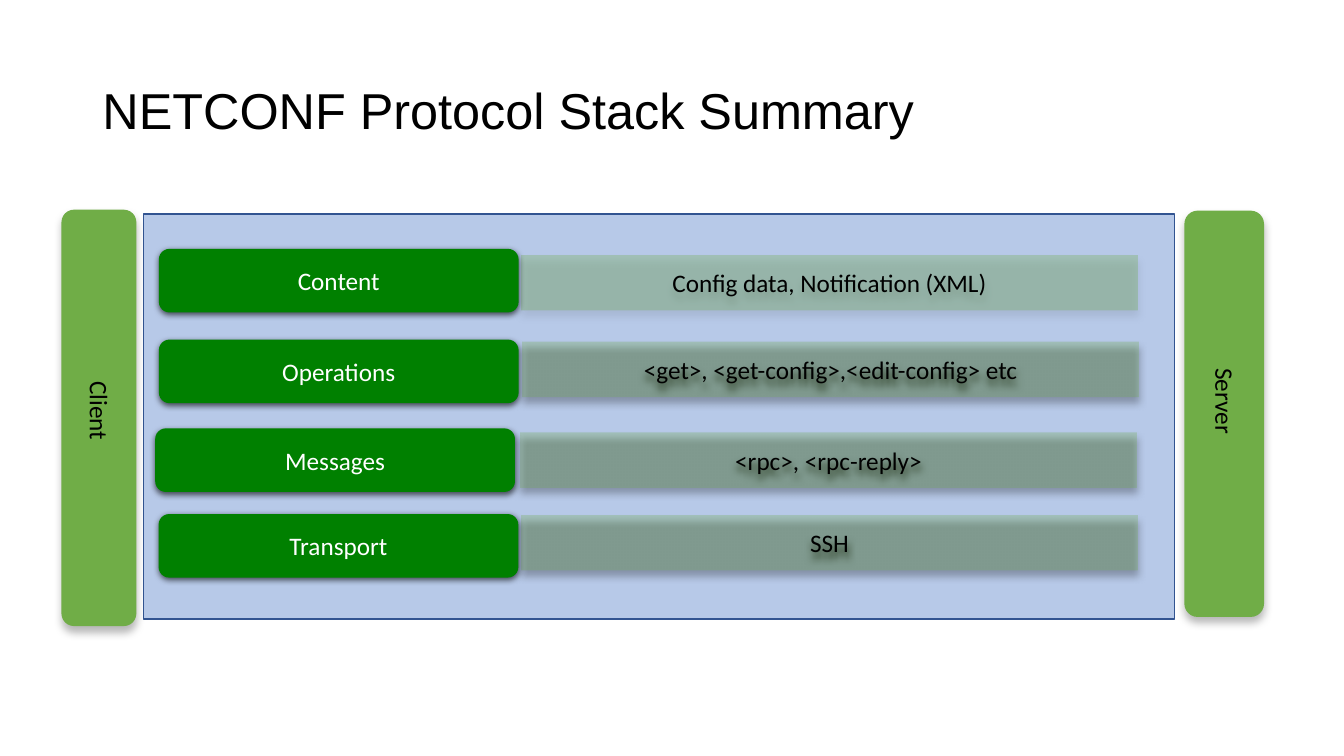
from lxml import etree
from pptx import Presentation
from pptx.dml.color import RGBColor
from pptx.enum.shapes import MSO_SHAPE
from pptx.enum.text import MSO_ANCHOR, MSO_AUTO_SIZE, PP_ALIGN
from pptx.oxml.ns import qn
from pptx.util import Pt

RECT, ROUND = MSO_SHAPE.RECTANGLE, MSO_SHAPE.ROUNDED_RECTANGLE
MIDDLE, TOP = MSO_ANCHOR.MIDDLE, MSO_ANCHOR.TOP
LEFT, CENTER = PP_ALIGN.LEFT, PP_ALIGN.CENTER
COLORS = {
    "panel": "4472C4",
    "panel_line": "325491",
    "label": "008000",
    "bar": "70AD47",
    "black": "000000",
    "white": "FFFFFF",
}
SOFT = {"alpha": 27, "blur": 6, "dist": 4}
CRISP = {"alpha": 63, "blur": 4.5, "dist": 1.5}
LAYERS = [
    ("Content", 113.5, 177.8, "Config data, Notification (XML)", 372.2, 182.2, 30),
    ("Operations", 113.5, 242.6, "<get>, <get-config>,<edit-config> etc", 373, 244.1, 27),
    ("Messages", 110.9, 306, "<rpc>, <rpc-reply>", 371.5, 308.9, 27),
    ("Transport", 113.3, 367.2, "SSH", 372.2, 367.9, 27),
]
SIDES = [
    ("Client", (43.9, 149.8, 53.5, 297.4), (40.3, 277.9, 61.9, 31.7)),
    ("Server", (846, 150.5, 56.9, 290.2), (841.7, 271.4, 67, 31.7)),
]


def rgb(name):
    return RGBColor.from_string(COLORS[name])


def add_alpha(color, percent):
    etree.SubElement(color, qn("a:alpha"), val=str(percent * 1000))


def add_shadow(sp, alpha, blur, dist):
    effects = sp._element.spPr.find(qn("a:effectLst"))
    shadow = etree.SubElement(
        effects, qn("a:outerShdw"), blurRad=str(Pt(blur)), dist=str(Pt(dist)),
        dir="5400000", algn="ctr", rotWithShape="0")
    color = etree.SubElement(shadow, qn("a:srgbClr"), val=COLORS["black"])
    add_alpha(color, alpha)


def write(sp, text, size=18, font="Calibri", color="black", align=CENTER,
          anchor=MIDDLE, margins=(9.4, 5), wrap=True, spacing=None):
    tf = sp.text_frame
    tf.word_wrap = wrap
    tf.vertical_anchor = anchor
    tf.margin_left = tf.margin_right = Pt(margins[0])
    tf.margin_top = tf.margin_bottom = Pt(margins[1])
    p = tf.paragraphs[0]
    p.alignment = align
    p.line_spacing = spacing
    r = p.add_run()
    r.text = text
    r.font.size = Pt(size)
    r.font.name = font
    r.font.color.rgb = rgb(color)


def add_box(s, kind, box, fill, alpha=None, line=None, shadow=None):
    sp = s.shapes.add_shape(kind, *map(Pt, box))
    sp.shadow.inherit = False
    sp.fill.solid()
    sp.fill.fore_color.rgb = rgb(fill)
    if alpha:
        add_alpha(sp._element.spPr.find(qn("a:solidFill"))[0], alpha)
    if line:
        sp.line.color.rgb = rgb(line)
        sp.line.width = Pt(1)
    else:
        sp.line.fill.background()
    if shadow:
        add_shadow(sp, **shadow)
    return sp


def add_title(s, text):
    title = s.shapes.title
    title.left, title.top, title.width, title.height = map(Pt, (66, 28.8, 828, 104.4))
    write(title, text, size=36, font="Arial", align=LEFT, margins=(7.2, 3.6), spacing=0.9)


def add_layer(s, label, label_x, label_y, detail, detail_x, detail_y, alpha):
    bar = add_box(s, RECT, (detail_x, detail_y, 440.6, 39.6), "bar", alpha=alpha, shadow=SOFT)
    write(bar, detail)
    tag = add_box(s, ROUND, (label_x, label_y, 257, 45.4), "label", shadow=CRISP)
    write(tag, label, color="white")


def add_side(s, name, box, text_box):
    add_box(s, ROUND, box, "bar", shadow=SOFT)
    tb = s.shapes.add_textbox(*map(Pt, text_box))
    tb.rotation = 90
    write(tb, name, align=LEFT, anchor=TOP, wrap=False)
    tb.text_frame.auto_size = MSO_AUTO_SIZE.SHAPE_TO_FIT_TEXT


def main():
    prs = Presentation()
    prs.slide_width, prs.slide_height = Pt(960), Pt(540)
    s = prs.slides.add_slide(prs.slide_layouts[5])
    add_title(s, "NETCONF Protocol Stack Summary")
    add_box(s, RECT, (102.4, 152.8, 736.4, 289.4), "panel", alpha=38, line="panel_line")
    for layer in LAYERS:
        add_layer(s, *layer)
    for side in SIDES:
        add_side(s, *side)
    prs.save("out.pptx")


if __name__ == "__main__":
    main()
